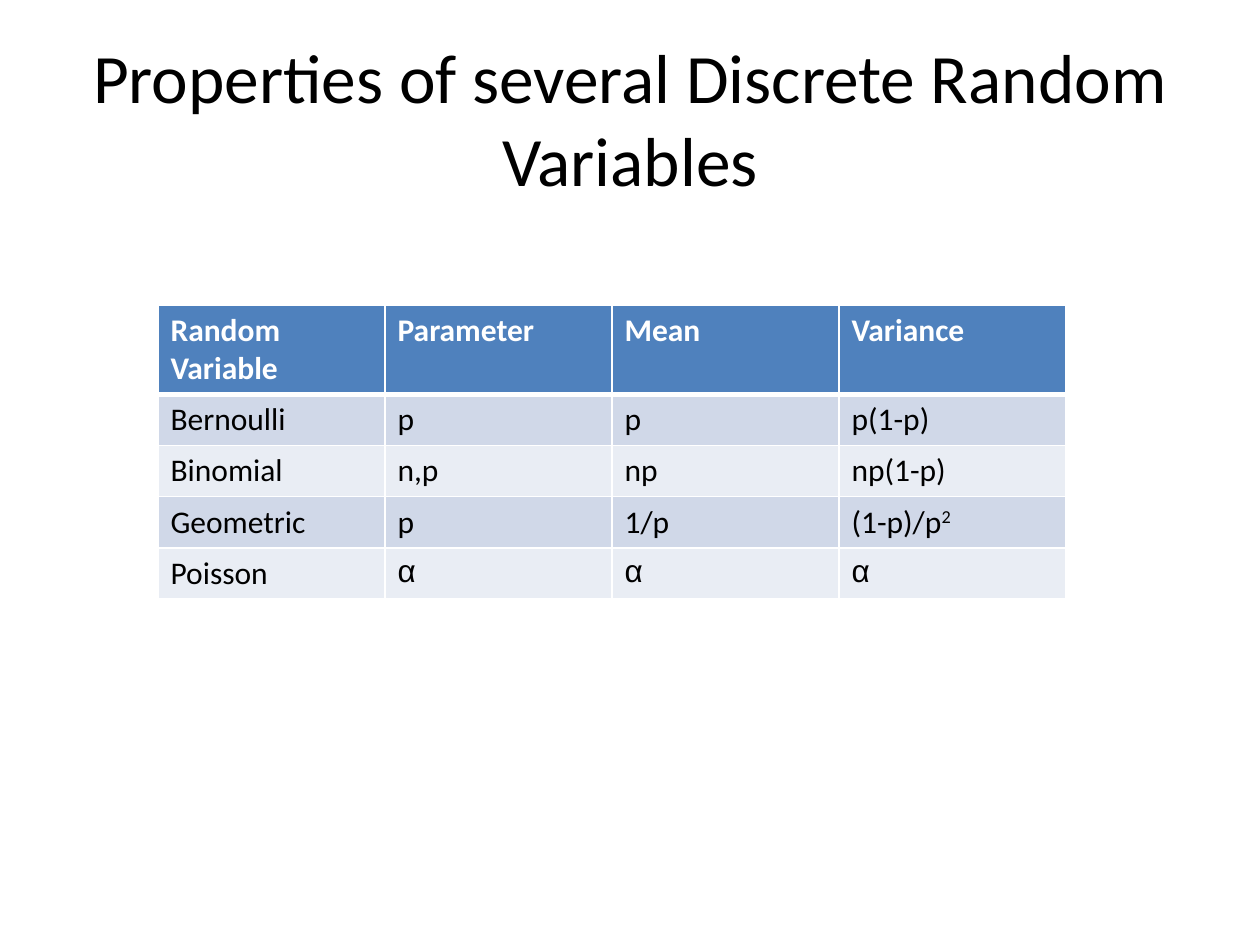
from lxml.etree import SubElement
from pptx import Presentation
from pptx.dml.color import RGBColor
from pptx.enum.text import MSO_ANCHOR as ANCHOR, PP_ALIGN as ALIGN
from pptx.oxml.ns import qn
from pptx.util import Pt

PX = 914400 / 126  # EMU per px

HEADER = ["Random Variable", "Parameter", "Mean", "Variance"]
# "^" marks the start of a superscript
VARIABLES = [
    ["Bernoulli", "p", "p", "p(1-p)"],
    ["Binomial", "n,p", "np", "np(1-p)"],
    ["Geometric", "p", "1/p", "(1-p)/p^2"],
    ["Poisson", "α", "α", "α"],
]
HEADER_FILL = "4F81BD"
BAND_FILLS = ["D0D8E8", "E9EDF4"]
COL_W, HEADER_H, ROW_H = 227, 88, 51


def px(n):
    return round(n * PX)


def rgb(color):
    return RGBColor.from_string(color)


def add_run(p, text, size=18, color="000000", bold=False, font="Calibri", baseline=None):
    r = p.add_run()
    r.text = text
    r.font.size, r.font.bold, r.font.name = Pt(size), bold, font
    r.font.color.rgb = rgb(color)
    if baseline:
        r.font._element.set("baseline", str(baseline))


def set_border(cell, side, width, color="FFFFFF"):
    ln = SubElement(cell._tc.get_or_add_tcPr(), qn(f"a:ln{side}"), w=str(Pt(width)))
    SubElement(SubElement(ln, qn("a:solidFill")), qn("a:srgbClr"), val=color)


def fill_cell(cell, text, fill, top=1, bottom=1, **fmt):
    # Borders come before the fill in the cell properties
    for side, width in zip("LRTB", (1, 1, top, bottom)):
        set_border(cell, side, width)
    cell.fill.solid()
    cell.fill.fore_color.rgb = rgb(fill)
    p = cell.text_frame.paragraphs[0]
    base, _, power = text.partition("^")
    add_run(p, base, font="Arial" if base == "α" else "Calibri", **fmt)
    if power:
        add_run(p, power, baseline=30000, **fmt)


def set_title(s, text, x, y, w, h):
    sp = s.shapes.title
    sp.left, sp.top, sp.width, sp.height = map(px, (x, y, w, h))
    tf = sp.text_frame
    tf.word_wrap, tf.vertical_anchor = True, ANCHOR.MIDDLE
    p = tf.paragraphs[0]
    p.alignment = ALIGN.CENTER
    add_run(p, text, size=39.6)


def add_properties_table(s, x, y):
    rows, cols = len(VARIABLES) + 1, len(HEADER)
    height = HEADER_H + ROW_H * len(VARIABLES)
    table = s.shapes.add_table(rows, cols, px(x), px(y), px(COL_W * cols), px(height)).table
    for col in table.columns:
        col.width = px(COL_W)
    for i, row in enumerate(table.rows):
        row.height = px(ROW_H if i else HEADER_H)

    # Header row
    for j, text in enumerate(HEADER):
        fill_cell(table.cell(0, j), text, HEADER_FILL, bottom=3, color="FFFFFF", bold=True)
    # Banded body rows
    for i, values in enumerate(VARIABLES):
        for j, text in enumerate(values):
            fill_cell(table.cell(i + 1, j), text, BAND_FILLS[i % 2], top=1 if i else 3)


def main():
    prs = Presentation()
    prs.slide_width, prs.slide_height = px(1260), px(945)
    s = prs.slides.add_slide(prs.slide_layouts[5])
    set_title(s, "Properties of several Discrete Random Variables", 63, 38, 1134, 158)
    add_properties_table(s, 158, 305)
    prs.save("out.pptx")


if __name__ == "__main__":
    main()
